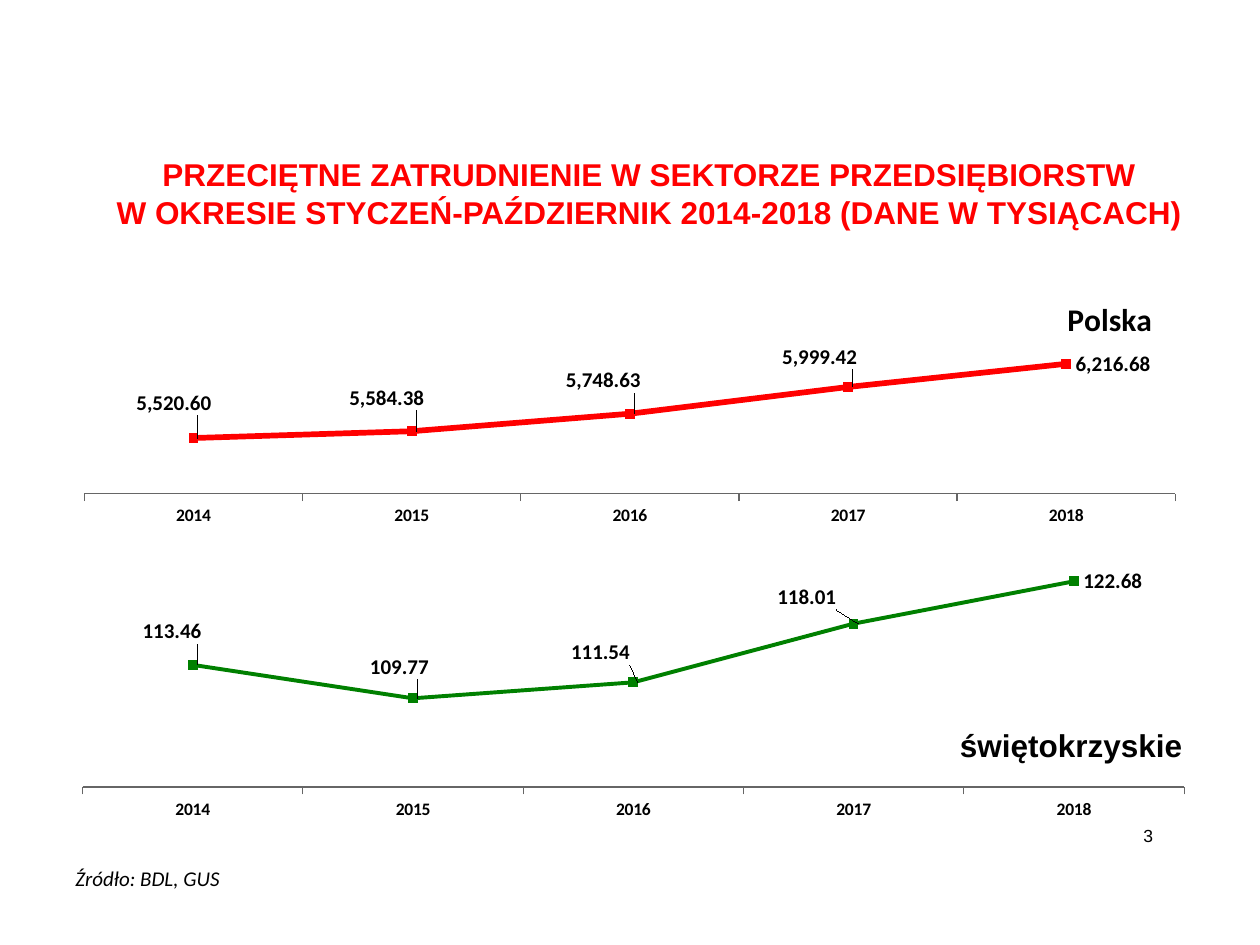
from lxml import etree
from pptx import Presentation
from pptx.chart.data import CategoryChartData
from pptx.dml.color import RGBColor
from pptx.enum.chart import XL_CHART_TYPE as ChartType, XL_LABEL_POSITION as LabelPosition
from pptx.enum.chart import XL_MARKER_STYLE as MarkerStyle, XL_TICK_MARK as TickMark
from pptx.enum.text import MSO_ANCHOR as Anchor, MSO_AUTO_SIZE as AutoSize, PP_ALIGN as Align
from pptx.oxml import parse_xml
from pptx.oxml.ns import nsdecls
from pptx.util import Pt

NUMBER_FORMAT = "#,##0.00"


def style_font(font, size, name="Calibri", color="000000", bold=False, italic=False):
    font.size, font.name, font.bold, font.italic = Pt(size), name, bold, italic
    font.color.rgb = RGBColor.from_string(color)


def manual_layout(target="", **fractions):
    """Return a c:layout element; x, y, w and h are fractions of the chart."""
    layout = parse_xml(f"<c:layout {nsdecls('c')}><c:manualLayout/></c:layout>")
    namespace = layout.nsmap["c"]
    values = dict(fractions)
    if target:
        values = {"layoutTarget": target, "xMode": "edge", "yMode": "edge", **values}
    for tag, value in values.items():
        etree.SubElement(layout[0], f"{{{namespace}}}{tag}").set("val", str(value))
    return layout


presentation = Presentation()
presentation.slide_width, presentation.slide_height = Pt(720), Pt(540)
slide = presentation.slides.add_slide(presentation.slide_layouts[5])

# Title
title = slide.shapes.title
title.left, title.top, title.width, title.height = Pt(40), Pt(85), Pt(662), Pt(51)
title.text_frame.text = (
    "PRZECIĘTNE ZATRUDNIENIE W SEKTORZE PRZEDSIĘBIORSTW\n"
    "W OKRESIE STYCZEŃ-PAŹDZIERNIK 2014-2018 (DANE W TYSIĄCACH)"
)
title.text_frame.auto_size = AutoSize.NONE
title.text_frame.vertical_anchor = Anchor.TOP
for paragraph in title.text_frame.paragraphs:
    paragraph.alignment = Align.CENTER
    style_font(paragraph.runs[0].font, 18, "Arial", "FF0000", bold=True)

# Line charts: box, values, axis range, colour, line width, plot area, label offsets in points
charts = [
    ((35.3, 154.8, 649.4, 149.8), (5520.6, 5584.38, 5748.63, 5999.42, 6216.68),
     (5000, 6400), "FF0000", 3.25, (0.02, 0.28, 0.96, 0.57),
     ((-38, -20), (-41, -19), (-42, -19), (-43, -17)), "Polska"),
    ((46.8, 304.6, 649.4, 172.8), (113.46, 109.77, 111.54, 118.01, 122.68),
     (100, 125), "008000", 2.25, (0, 0.09, 0.97, 0.75),
     ((-34, -19), (-30, -18), (-41, -17), (-49, -15)), None),
]
for box, values, axis_range, color, line_width, plot_area, offsets, heading in charts:
    chart_data = CategoryChartData(number_format=NUMBER_FORMAT)
    chart_data.categories = [str(year) for year in range(2014, 2019)]
    chart_data.add_series("Series 1", values)
    chart = slide.shapes.add_chart(ChartType.LINE_MARKERS, *map(Pt, box), chart_data).chart
    style_font(chart.font, 10)
    chart.has_legend = False
    chart.has_title = heading is not None
    if heading:
        frame = chart.chart_title.text_frame
        frame.text = heading
        style_font(frame.paragraphs[0].runs[0].font, 18, bold=True)
        chart.chart_title.include_in_layout = False
        for layout in chart.chart_title._element.xpath("c:layout"):
            chart.chart_title._element.remove(layout)
        chart.chart_title._element.xpath("c:tx")[0].addnext(
            manual_layout("inner", x=0.88, y=0.08))

    category_axis, value_axis = chart.category_axis, chart.value_axis
    category_axis.major_tick_mark = TickMark.OUTSIDE
    category_axis.has_major_gridlines = False
    category_axis.format.line.color.rgb = RGBColor.from_string("666666")
    category_axis.format.line.width = Pt(0.75)
    style_font(category_axis.tick_labels.font, 10, bold=True)
    value_axis.minimum_scale, value_axis.maximum_scale = axis_range
    value_axis.has_major_gridlines = False
    value_axis.visible = False

    plot = chart.plots[0]
    plot.vary_by_categories = False
    plot_element = chart._chartSpace.chart.plotArea
    for layout in plot_element.xpath("c:layout"):
        plot_element.remove(layout)
    plot_element.insert(0, manual_layout("inner", **dict(zip("xywh", plot_area))))

    series = plot.series[0]
    series.smooth = False
    series.format.line.color.rgb = RGBColor.from_string(color)
    series.format.line.width = Pt(line_width)
    series.marker.style, series.marker.size = MarkerStyle.SQUARE, 5
    for part in (series.marker.format.fill, series.marker.format.line.fill):
        part.solid()
        part.fore_color.rgb = RGBColor.from_string(color)

    labels = series.data_labels
    labels.show_value = True
    labels.number_format, labels.number_format_is_linked = NUMBER_FORMAT, False
    labels.position = LabelPosition.RIGHT
    style_font(labels.font, 12, bold=True)
    for index, (shift_x, shift_y) in enumerate(offsets):
        label = series.points[index].data_label
        label.position = LabelPosition.RIGHT
        style_font(label.font, 12, bold=True)
        label_index = series._element.xpath(f".//c:dLbl/c:idx[@val='{index}']")[0]
        label_index.addnext(manual_layout(x=shift_x / box[2], y=shift_y / box[3]))

# Region name, source and slide number
notes = [
    ((541.4, 411.1, 156, 29), "świętokrzyskie", Align.LEFT, Anchor.TOP,
     dict(size=18, name="Arial", bold=True)),
    ((36, 491, 562, 22), "Źródło: BDL, GUS", Align.LEFT, Anchor.TOP,
     dict(size=12, italic=True)),
    ((620.6, 463, 45.4, 29), "3", Align.RIGHT, Anchor.MIDDLE,
     dict(size=10, name="Arial")),
]
for box, text, alignment, anchor, font_style in notes:
    frame = slide.shapes.add_textbox(*map(Pt, box)).text_frame
    frame.word_wrap = True
    frame.vertical_anchor = anchor
    frame.text = text
    frame.paragraphs[0].alignment = alignment
    style_font(frame.paragraphs[0].runs[0].font, **font_style)

presentation.save("out.pptx")
